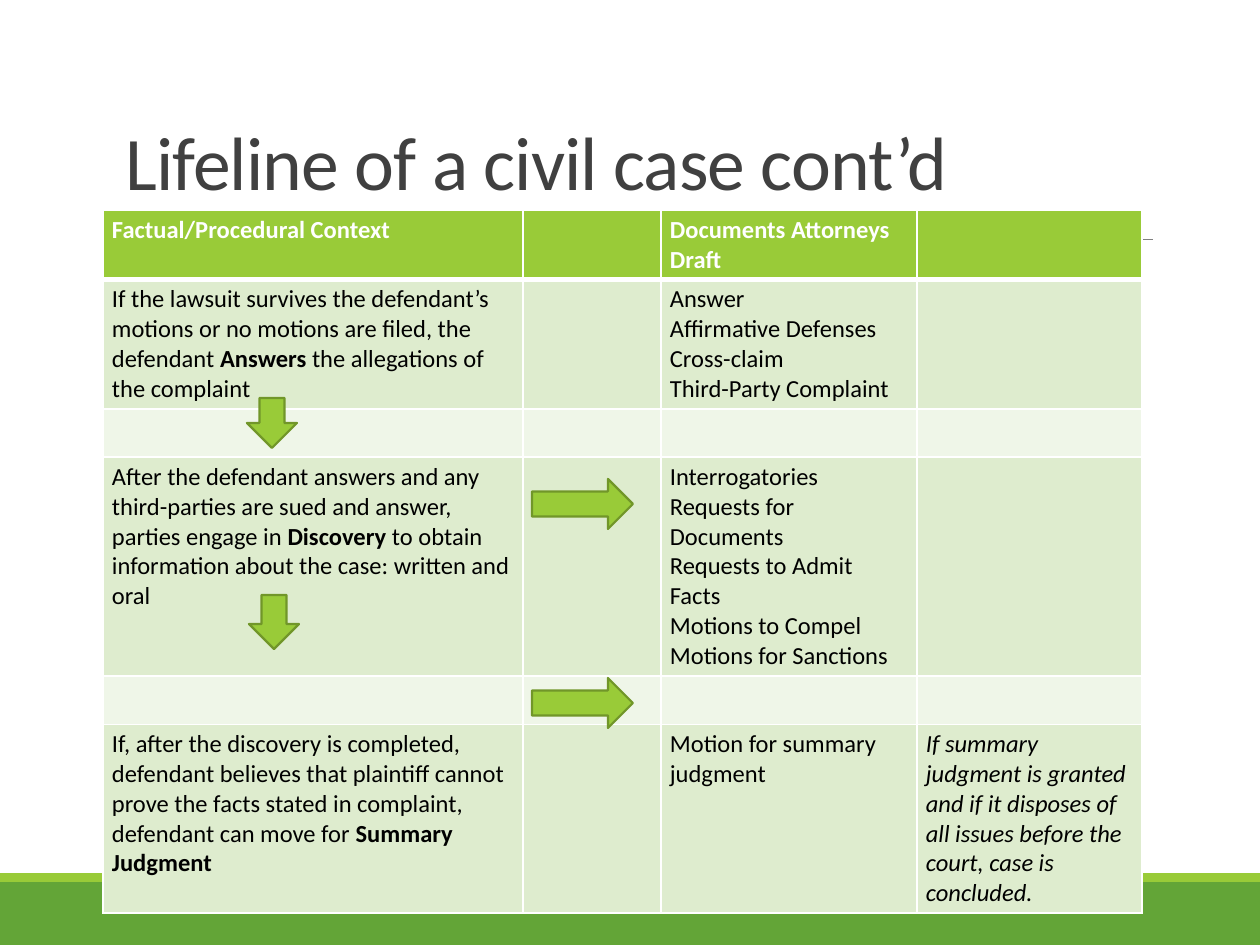
"""Build the slide on the lifeline of a civil case."""
from dataclasses import dataclass

from lxml import etree
from pptx import Presentation
from pptx.dml.color import RGBColor
from pptx.enum.shapes import MSO_CONNECTOR, MSO_SHAPE
from pptx.enum.text import MSO_ANCHOR, MSO_AUTO_SIZE, PP_ALIGN
from pptx.oxml.ns import qn
from pptx.util import Pt

RECT = MSO_SHAPE.RECTANGLE
DOWN = MSO_SHAPE.DOWN_ARROW
RIGHT = MSO_SHAPE.RIGHT_ARROW
LINE = MSO_CONNECTOR.STRAIGHT
LEFT = PP_ALIGN.LEFT
BOTTOM = MSO_ANCHOR.BOTTOM
FIXED = MSO_AUTO_SIZE.NONE
SCALE = 914400 / 126


@dataclass(frozen=True)
class Theme:
    """Colours and type sizes."""
    font: str = "Calibri"
    lime: str = "99CB38"
    green: str = "63A537"
    edge: str = "719629"
    gray: str = "808080"
    title: str = "404040"
    ink: str = "000000"
    white: str = "FFFFFF"
    bands: tuple = ("DEECCE", "EFF6E8")
    head: float = 43.2
    body: float = 14


def px(num):
    """Turn pixels into EMU."""
    return round(num * SCALE)


def color(code):
    """Turn a hex code into a colour."""
    return RGBColor.from_string(code)


class Deck:
    """Hold the theme and the current slide."""

    def __init__(self, theme):
        """Open a blank show with one titled slide."""
        self.theme = theme
        self.show = Presentation()
        self.show.slide_width, self.show.slide_height = px(1260), px(945)
        self.slide = self.show.slides.add_slide(self.show.slide_layouts[5])

    def style(self, run, size, code):
        """Set the font of a run."""
        run.font.name = self.theme.font
        run.font.size = Pt(size)
        run.font.color.rgb = color(code)

    def title(self, text, box):
        """Fill and place the title."""
        shape = self.slide.shapes.title
        shape.left, shape.top, shape.width, shape.height = map(px, box)
        frame = shape.text_frame
        frame.text = text
        frame.auto_size = FIXED
        frame.vertical_anchor = BOTTOM
        para = frame.paragraphs[0]
        para.alignment = LEFT
        para.line_spacing = 0.85
        run = para.runs[0]
        self.style(run, self.theme.head, self.theme.title)
        run.font._element.set("spc", "-50")

    def shape(self, kind, box, fill, edge=None):
        """Add a filled shape, with an edge if one is named."""
        shape = self.slide.shapes.add_shape(kind, *map(px, box))
        shape.shadow.inherit = False
        shape.fill.solid()
        shape.fill.fore_color.rgb = color(fill)
        if edge:
            shape.line.color.rgb = color(edge)
            shape.line.width = Pt(1.25)
        else:
            shape.line.fill.background()

    def rule(self, left, right, top):
        """Add a thin level line."""
        line = self.slide.shapes.add_connector(LINE, *map(px, (left, top, right, top)))
        line.line.color.rgb = color(self.theme.gray)
        line.line.width = Pt(0.5)
        etree.SubElement(line._element.spPr, qn("a:effectLst"))

    def border(self, cell, row):
        """Draw white cell borders, thick below the header."""
        props = cell._tc.get_or_add_tcPr()
        thick = {0: "lnB", 1: "lnT"}.get(row)
        for side in ("lnL", "lnR", "lnT", "lnB"):
            width = Pt(3 if side == thick else 1)
            line = etree.SubElement(props, qn(f"a:{side}"), w=str(width))
            fill = etree.SubElement(line, qn("a:solidFill"))
            etree.SubElement(fill, qn("a:srgbClr"), val=self.theme.white)

    def cell(self, cell, row, text, slant):
        """Fill one cell; stars mark bold words."""
        theme = self.theme
        cell.margin_left = cell.margin_right = px(9)
        cell.margin_top = cell.margin_bottom = px(5)
        self.border(cell, row)
        cell.fill.solid()
        cell.fill.fore_color.rgb = color(theme.bands[(row - 1) % 2] if row else theme.lime)
        if not text:
            return
        frame = cell.text_frame
        frame.text = text.replace("*", "")
        for para, words in zip(frame.paragraphs, text.split("\n")):
            para.clear()
            for spot, part in enumerate(words.split("*")):
                if part:
                    run = para.add_run()
                    run.text = part
                    self.style(run, theme.body, theme.ink if row else theme.white)
                    run.font.bold = row == 0 or spot % 2 == 1
                    run.font.italic = slant

    def table(self, left, top, cols, rows, data):
        """Add the table; the last column is slanted."""
        box = map(px, (left, top, sum(cols), sum(rows)))
        grid = self.slide.shapes.add_table(len(rows), len(cols), *box).table
        for col, width in zip(grid.columns, cols):
            col.width = px(width)
        for row, height in enumerate(rows):
            grid.rows[row].height = px(height)
            for col in range(len(cols)):
                text = data.get((row, col), "")
                self.cell(grid.cell(row, col), row, text, col == len(cols) - 1)


CELLS = {
    (0, 0): "Factual/Procedural Context",
    (0, 2): "Documents Attorneys Draft",
    (1, 0): "If the lawsuit survives the defendant’s motions or no motions are filed, "
            "the defendant *Answers* the allegations of the complaint",
    (1, 2): "Answer\nAffirmative Defenses\nCross-claim\nThird-Party Complaint",
    (3, 0): "After the defendant answers and any third-parties are sued and answer, "
            "parties engage in *Discovery* to obtain information about the case: "
            "written and oral",
    (3, 2): "Interrogatories\nRequests for Documents\nRequests to Admit Facts\n"
            "Motions to Compel\nMotions for Sanctions",
    (5, 0): "If, after the discovery is completed, defendant believes that plaintiff "
            "cannot prove the facts stated in complaint, defendant can move for "
            "*Summary Judgment*",
    (5, 2): "Motion for summary judgment",
    (5, 3): "If summary judgment is granted and if it disposes of all issues before "
            "the court, case is concluded.",
}
ARROWS = (
    (DOWN, (247, 398, 50, 50)),
    (DOWN, (249, 595, 50, 54)),
    (RIGHT, (532, 479, 101, 50)),
    (RIGHT, (532, 678, 101, 50)),
)


def main():
    """Build and save the slide."""
    theme = Theme()
    deck = Deck(theme)
    deck.shape(RECT, (0, 882, 1260, 63), theme.green)
    deck.shape(RECT, (0, 873, 1260, 9), theme.lime)
    deck.rule(123, 1153, 239)
    deck.title("Lifeline of a civil case cont’d", (113, 140, 1040, 72))
    deck.table(103, 210, (420, 138, 256, 225), (67, 129, 48, 218, 48, 188), CELLS)
    for kind, box in ARROWS:
        deck.shape(kind, box, theme.lime, theme.edge)
    deck.show.save("out.pptx")


if __name__ == "__main__":
    main()
